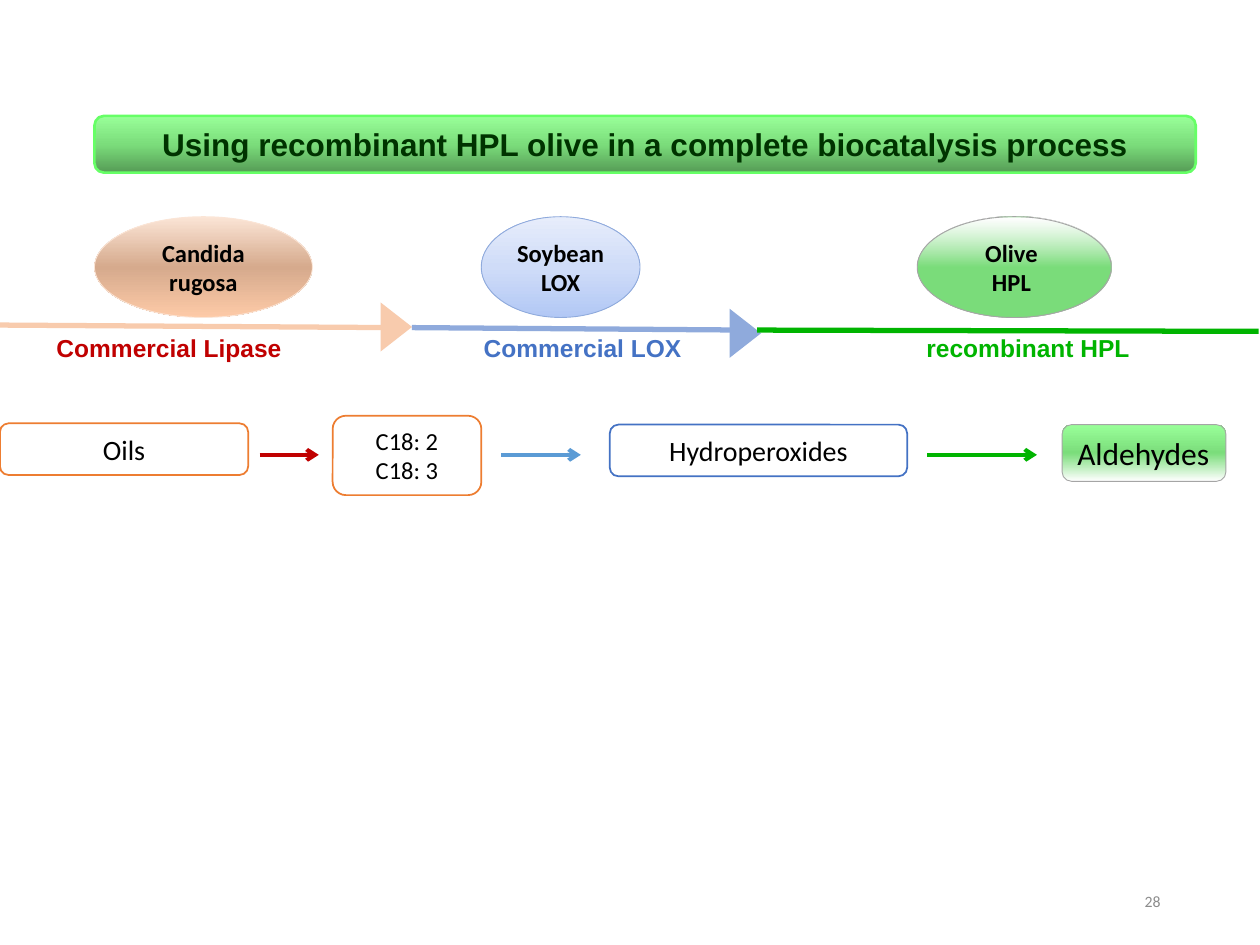
from lxml import etree
from pptx import Presentation
from pptx.dml.color import RGBColor
from pptx.enum.shapes import MSO_CONNECTOR, MSO_SHAPE
from pptx.enum.text import MSO_ANCHOR, MSO_AUTO_SIZE, PP_ALIGN
from pptx.oxml.ns import qn
from pptx.util import Inches, Pt

ROUND, OVAL, TIP = MSO_SHAPE.ROUNDED_RECTANGLE, MSO_SHAPE.OVAL, MSO_SHAPE.ISOSCELES_TRIANGLE
STRAIGHT = MSO_CONNECTOR.STRAIGHT
LEFT, MID, RIGHT = PP_ALIGN.LEFT, PP_ALIGN.CENTER, PP_ALIGN.RIGHT
MIDDLE, GROW = MSO_ANCHOR.MIDDLE, MSO_AUTO_SIZE.SHAPE_TO_FIT_TEXT

THEME = {
    "head": "Arial", "body": "Calibri",
    "big": 18, "box": 16, "small": 14, "page": 9,
    "black": "000000", "white": "FFFFFF", "gray": "A5A5A5", "dim": "8C8C8C",
    "red": "C00000", "orange": "ED7D31", "peach": "F8CBAD", "cream": "FBE5D6",
    "blue": "4472C4", "sky": "5B9BD5", "pale": "8FAADC",
    "green": "00B400", "forest": "003300", "lime": "66FF66",
    "title": (270, [(0, "569C56"), (50, "7BDD7B"), (100, "99FF99")]),
    "lipase": (90, [(0, "FBE5D6"), (50, "D6AA8D"), (100, "FDCAA7")]),
    "lox": (270, [(0, "B2C8F5"), (50, "CFDCF8"), (100, "E7EDFB")]),
    "hpl": (270, [(50, "7BDD7B"), (98, "FFFFFF", 73), (100, "99FF99")]),
    "final": (270, [(0, "FFFFFF"), (50, "7BDD7B"), (100, "99FF99")]),
}

TITLE = "Using recombinant HPL olive in a complete biocatalysis process"
OVALS = [
    ("Candida rugosa", 0.75, 1.73, "lipase", "cream"),
    ("Soybean LOX", 3.82, 1.26, "lox", "pale"),
    ("Olive \nHPL ", 7.28, 1.54, "hpl", "gray"),
]
LABELS = [
    ("Commercial Lipase", 0.35, 2.2, "red", True),
    ("Commercial LOX", 3.74, 1.84, "blue", False),
    (" recombinant HPL", 7.2, 2.05, "green", True),
]
BOXES = [
    ("Oils", (0, 3.36, 1.97, 0.41), "white", "orange", "box"),
    ("C18: 2\nC18: 3", (2.64, 3.3, 1.18, 0.63), "white", "orange", "small"),
    ("Hydroperoxides", (4.84, 3.37, 2.36, 0.41), "white", "blue", "box"),
]
ARROWS = [(2.06, 2.53, "red"), (3.98, 4.61, "sky"), (7.36, 8.23, "green")]
TRACKS = [
    ((0, 2.58), (3.11, 2.6), "peach"),
    ((3.27, 2.6), (5.94, 2.62), "pale"),
    ((6.01, 2.62), (9.99, 2.63), "green"),
]
TIPS = [(2.95, 2.47, "peach"), (5.72, 2.52, "pale")]
OVAL_TOP, OVAL_HIGH = 1.72, 0.8
LABEL_TOP, LABEL_HIGH = 2.59, 0.34
ARROW_Y = 3.61


def tint(name):
    return RGBColor.from_string(THEME[name])


def add_sub(node, tag, **attrs):
    return etree.SubElement(node, qn(tag), attrs)


def blend(shape, name):
    angle, stops = THEME[name]
    shape.fill.gradient()
    grad = shape.fill._xPr.find(qn("a:gradFill"))
    for child in list(grad):
        grad.remove(child)
    group = add_sub(grad, "a:gsLst")
    for place, color, *alpha in stops:
        stop = add_sub(group, "a:gs", pos=str(place * 1000))
        paint = add_sub(stop, "a:srgbClr", val=color)
        for share in alpha:
            add_sub(paint, "a:alpha", val=str(share * 1000))
    add_sub(grad, "a:lin", ang=str(angle * 60000), scaled="0")


def write(shape, text, size, color="black", font="body", bold=False,
          align=MID, wrap=True, grow=True):
    frame = shape.text_frame
    frame.text = text
    frame.word_wrap = wrap
    if grow:
        frame.auto_size = GROW
    for para in frame.paragraphs:
        para.alignment = align
        for run in para.runs:
            run.font.name = THEME[font]
            run.font.size = Pt(THEME[size])
            run.font.bold = bold
            run.font.color.rgb = tint(color)


def add_form(slide, kind, place, fill, edge=None, width=1):
    shape = slide.shapes.add_shape(kind, *map(Inches, place))
    shape.shadow.inherit = False
    if isinstance(THEME[fill], tuple):
        blend(shape, fill)
    else:
        shape.fill.solid()
        shape.fill.fore_color.rgb = tint(fill)
    if edge:
        shape.line.color.rgb = tint(edge)
        shape.line.width = Pt(width)
    else:
        shape.line.fill.background()
    return shape


def add_line(slide, start, end, color, width, arrow=False):
    line = slide.shapes.add_connector(STRAIGHT, *map(Inches, start + end))
    line.line.color.rgb = tint(color)
    line.line.width = Pt(width)
    if arrow:
        add_sub(line.line._get_or_add_ln(), "a:tailEnd", type="arrow")
    add_sub(line._element.spPr, "a:effectLst")


def main():
    deck = Presentation()
    deck.slide_width, deck.slide_height = Inches(10), Inches(7.5)
    slide = deck.slides.add_slide(deck.slide_layouts[6])

    page = slide.shapes.add_textbox(*map(Inches, (7.06, 6.95, 2.25, 0.4)))
    write(page, "28", "page", "dim", align=RIGHT, grow=False)
    page.text_frame.vertical_anchor = MIDDLE

    for text, place, fill, edge, size in BOXES:
        write(add_form(slide, ROUND, place, fill, edge), text, size)
    final = add_form(slide, ROUND, (8.43, 3.37, 1.3, 0.45), "final", "gray", 0.5)
    write(final, "Aldehydes", "big", align=LEFT, wrap=False)
    for start, end, color in ARROWS:
        add_line(slide, (start, ARROW_Y), (end, ARROW_Y), color, 2.25, True)

    for text, left, wide, fill, edge in OVALS:
        oval = add_form(slide, OVAL, (left, OVAL_TOP, wide, OVAL_HIGH), fill, edge, 0.5)
        write(oval, text, "small", bold=True)
    for text, left, wide, color, wrap in LABELS:
        label = slide.shapes.add_textbox(*map(Inches, (left, LABEL_TOP, wide, LABEL_HIGH)))
        write(label, text, "small", color, "head", True, LEFT, wrap)

    for left, top, color in TIPS:
        tip = add_form(slide, TIP, (left, top, 0.39, 0.25), color)
        tip.rotation = 90
    for start, end, color in TRACKS:
        add_line(slide, start, end, color, 3)

    title = add_form(slide, ROUND, (0.75, 0.92, 8.74, 0.45), "title", "lime", 1.5)
    write(title, TITLE, "big", "forest", "head", True)
    deck.save("out.pptx")


if __name__ == "__main__":
    main()
